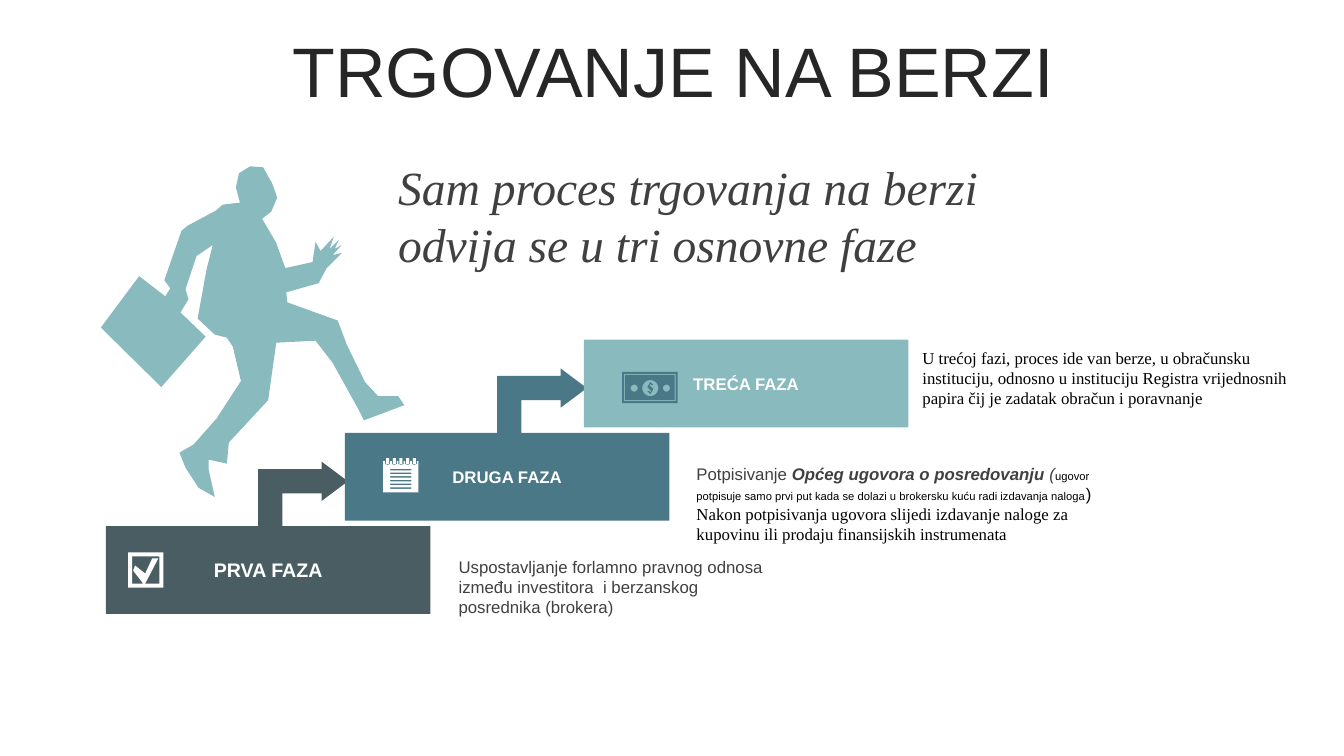
from math import cos, pi, sin

from pptx import Presentation
from pptx.dml.color import RGBColor
from pptx.enum.shapes import MSO_SHAPE
from pptx.enum.text import MSO_ANCHOR, MSO_AUTO_SIZE, PP_ALIGN
from pptx.util import Inches, Pt

SLATE = RGBColor(0x4A, 0x5D, 0x62)
BLUE = RGBColor(0x4A, 0x78, 0x86)
AQUA = RGBColor(0x88, 0xBA, 0xBE)
WHITE = RGBColor(0xFF, 0xFF, 0xFF)
BLACK = RGBColor(0x00, 0x00, 0x00)
DARK = RGBColor(0x26, 0x26, 0x26)
GREY = RGBColor(0x40, 0x40, 0x40)
SANS, SERIF = "Arial", "Times New Roman"

STEP_WIDTH, STEP_HEIGHT = 3.22, 0.87
STEP_RIGHT, STEP_UP = 2.37, 0.925

# Outlines are in hundredths of an inch
RUNNER = [
    # Briefcase and rear arm
    (0, 160), (60, 219), (104, 169), (79, 145), (87, 132), (84, 122), (95, 89), (111, 78),
    # Jacket and rear leg
    (105, 102), (96, 151), (113, 167), (125, 170), (131, 179), (139, 213), (115, 250),
    (92, 276), (78, 284), (84, 299), (97, 319), (113, 328), (107, 301), (107, 291), (125, 295),
    (127, 274), (166, 232), (174, 175), (213, 173),
    # Front leg
    (230, 195), (256, 242), (261, 252), (301, 237), (295, 228), (275, 228), (262, 214),
    (244, 177), (235, 153), (185, 135), (184, 125),
    # Front arm and hand
    (216, 116), (224, 101), (239, 86), (230, 88), (239, 78), (232, 82), (236, 73), (227, 82),
    (231, 70), (218, 84), (213, 75), (210, 95), (183, 101), (174, 76), (160, 52),
    # Head and back
    (169, 45), (175, 31), (170, 17), (161, 1), (148, 0), (137, 7), (134, 21), (138, 36),
    (121, 38), (114, 44), (86, 59), (80, 64), (63, 113), (69, 121), (64, 129), (38, 109)]
CHECK = [(5, 18), (7, 13), (17, 21), (24, 6), (30, 6), (17, 31), (15, 31)]
HALF_DOLLAR = [(0, -6), (3, -3), (1, -3), (0, -4), (-1, -3), (3, 1)]


def rectangle(left, top, right, bottom):
    return [(left, top), (right, top), (right, bottom), (left, bottom)]


def circle(x, y, radius, sides=24):
    angles = [2 * pi * side / sides for side in range(sides)]
    return [(x + radius * cos(angle), y + radius * sin(angle)) for angle in angles]


def paint(shape, color):
    shape.shadow.inherit = False
    shape.fill.solid()
    shape.fill.fore_color.rgb = color
    shape.line.fill.background()


def add_outline(slide, left, top, contours, color):
    """Draw closed contours as one shape; inner contours become holes."""
    placed = [[(Inches(left + x / 100), Inches(top + y / 100)) for x, y in contour]
              for contour in contours]
    builder = slide.shapes.build_freeform(*placed[0][0], scale=1.0)
    for index, points in enumerate(placed):
        if index:
            builder.move_to(*points[0])
        builder.add_line_segments(points[1:], close=True)
    paint(builder.convert_to_shape(), color)


def add_checkbox(slide, left, top):
    frames = [rectangle(inset, inset, 35 - inset, 35 - inset) for inset in (0, 4)]
    add_outline(slide, left, top, frames + [CHECK], WHITE)


def add_notepad(slide, left, top):
    page = [(0, 3)]
    rings = []
    for ring in range(5):
        x = 2 + 6.6 * ring
        page += [(x, 3), (x, 6), (x + 2.5, 7), (x + 5, 6), (x + 5, 3)]
        rings.append(rectangle(x + 1, 0, x + 4, 6))
    page += [(35, 3), (35, 34), (0, 34)]
    lines = [rectangle(7, 10.7 + 3.65 * row, 28, 12.2 + 3.65 * row) for row in range(6)]
    add_outline(slide, left, top, [page] + lines + rings, WHITE)


def add_banknote(slide, left, top):
    frames = [rectangle(inset, inset, 55 - inset, 31 - inset) for inset in (0, 2, 3)]
    circles = [circle(28 + shift, 16, radius) for shift, radius in ((0, 8), (-16, 3.5), (16, 3.5))]
    dollar = [(28 + turn * x, 16 + turn * y) for turn in (1, -1) for x, y in HALF_DOLLAR]
    add_outline(slide, left, top, frames + circles + [dollar], BLUE)


def add_title(slide, left, top, width, height):
    title = slide.shapes.title
    title.left, title.top = Inches(left), Inches(top)
    title.width, title.height = Inches(width), Inches(height)
    frame = title.text_frame
    frame.text = "TRGOVANJE NA BERZI"
    frame.vertical_anchor = MSO_ANCHOR.MIDDLE
    paragraph = frame.paragraphs[0]
    paragraph.alignment = PP_ALIGN.CENTER
    paragraph.line_spacing = 0.8
    paragraph.space_before = Pt(10)
    set_font(paragraph.font, 50, SANS, DARK)


def set_font(font, size, name, color, bold=False, italic=False):
    font.size, font.name, font.color.rgb = Pt(size), name, color
    font.bold, font.italic = bold, italic


def add_text(slide, left, top, width, height, text="", *style, **options):
    box = slide.shapes.add_textbox(Inches(left), Inches(top), Inches(width), Inches(height))
    box.text_frame.word_wrap = True
    box.text_frame.auto_size = MSO_AUTO_SIZE.SHAPE_TO_FIT_TEXT
    paragraph = box.text_frame.paragraphs[0]
    if text:
        paragraph.add_run().text = text
        set_font(paragraph.font, *style, **options)
    return paragraph


def add_step(slide, left, top, label, size, color):
    bar = slide.shapes.add_shape(MSO_SHAPE.RECTANGLE, Inches(left), Inches(top),
                                 Inches(STEP_WIDTH), Inches(STEP_HEIGHT))
    paint(bar, color)
    bar.text_frame.vertical_anchor = MSO_ANCHOR.MIDDLE
    paragraph = bar.text_frame.paragraphs[0]
    paragraph.text = label
    paragraph.alignment = PP_ALIGN.CENTER
    set_font(paragraph.font, size, SANS, WHITE, bold=True)


def add_step_arrow(slide, left, top, color):
    arrow = slide.shapes.add_shape(MSO_SHAPE.BENT_UP_ARROW, Inches(left + 1.63),
                                   Inches(top - 0.76), Inches(0.65), Inches(0.89))
    for index, value in enumerate((0.37, 0.3, 0.4)):
        arrow.adjustments[index] = value
    arrow.rotation = 270
    arrow._element.spPr.xfrm.set("flipV", "1")
    paint(arrow, color)


def add_staircase(slide, left, top):
    steps = [("PRVA FAZA", 14, SLATE, add_checkbox, 0.22, 0.26),
             ("DRUGA FAZA", 12, BLUE, add_notepad, 0.38, 0.25),
             ("TREĆA FAZA", 12, AQUA, add_banknote, 0.38, 0.32)]
    for index, (label, size, color, add_icon, icon_x, icon_y) in enumerate(steps):
        x, y = left + STEP_RIGHT * index, top - STEP_UP * index
        add_step(slide, x, y, label, size, color)
        if index < len(steps) - 1:
            add_step_arrow(slide, x, y, color)
        add_icon(slide, x + icon_x, y + icon_y)


def add_contract_note(slide, left, top, width, height):
    paragraph = add_text(slide, left, top, width, height)
    runs = [("Potpisivanje ", 12, SANS, GREY),
            ("Općeg ugovora o posredovanju ", 12, SANS, GREY, True, True),
            ("(", 12, SANS, GREY, False, True),
            ("ugovor potpisuje samo prvi put kada se dolazi u brokersku kuću radi izdavanja naloga",
             8, SANS, BLACK),
            (") ", 12, SANS, BLACK),
            ("Nakon potpisivanja ugovora slijedi izdavanje naloge za kupovinu ili prodaju "
             "finansijskih instrumenata", 12, SERIF, BLACK)]
    for text, *style in runs:
        run = paragraph.add_run()
        run.text = text
        set_font(run.font, *style)


def main():
    presentation = Presentation()
    presentation.slide_width, presentation.slide_height = Inches(13.33), Inches(7.5)
    slide = presentation.slides.add_slide(presentation.slide_layouts[5])
    add_title(slide, 0.35, 0.37, 12.66, 0.79)
    add_staircase(slide, 1.05, 5.22)
    # Notes beside the steps, and the lead sentence
    add_text(slide, 4.45, 5.47, 3.35, 0.71, "Uspostavljanje forlamno pravnog odnosa između "
             "investitora  i berzanskog posrednika (brokera)", 12, SANS, GREY)
    add_contract_note(slide, 6.81, 4.55, 4.3, 0.91)
    add_text(slide, 9.05, 3.4, 3.89, 0.71, "U trećoj fazi, proces ide van berze, u obračunsku "
             "instituciju, odnosno u instituciju Registra vrijednosnih papira čij je zadatak "
             "obračun i poravnanje", 12, SERIF, BLACK)
    add_text(slide, 3.85, 1.52, 6.75, 1.25, "Sam proces trgovanja na berzi odvija se u tri "
             "osnovne faze", 34, SERIF, GREY, italic=True)
    # Running man with a briefcase
    add_outline(slide, 1.0, 1.65, [RUNNER], AQUA)
    presentation.save("out.pptx")


if __name__ == "__main__":
    main()
